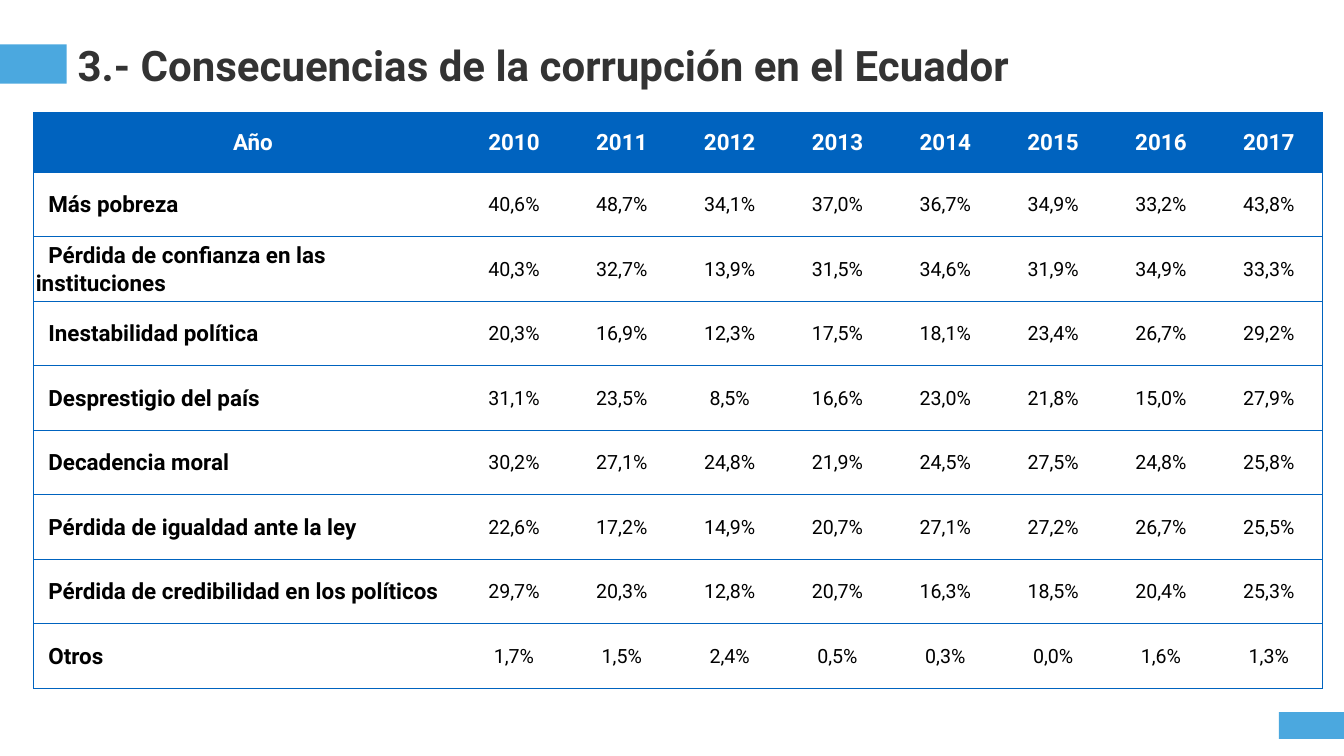
from dataclasses import dataclass

from lxml.etree import SubElement
from pptx import Presentation
from pptx.dml.color import RGBColor
from pptx.enum.shapes import MSO_SHAPE
from pptx.enum.text import MSO_ANCHOR, PP_ALIGN
from pptx.oxml.ns import qn
from pptx.util import Emu, Pt

EMU_PER_PX = 9144


@dataclass(frozen=True)
class Theme:
    font: str = "Roboto"
    title_color: str = "333333"
    accent: str = "4BA8DF"
    table_blue: str = "0063BF"
    header_text: str = "FFFFFF"
    body_text: str = "000000"
    title_size: int = 60
    label_size: int = 32
    value_size: int = 28
    border_width: float = 0.75
    line_spacing: float = 1.07


YEARS = range(2010, 2018)
CONSEQUENCES = [
    ("Más pobreza", "40,6 48,7 34,1 37,0 36,7 34,9 33,2 43,8"),
    ("Pérdida de confianza en las instituciones", "40,3 32,7 13,9 31,5 34,6 31,9 34,9 33,3"),
    ("Inestabilidad política", "20,3 16,9 12,3 17,5 18,1 23,4 26,7 29,2"),
    ("Desprestigio del país", "31,1 23,5 8,5 16,6 23,0 21,8 15,0 27,9"),
    ("Decadencia moral", "30,2 27,1 24,8 21,9 24,5 27,5 24,8 25,8"),
    ("Pérdida de igualdad ante la ley", "22,6 17,2 14,9 20,7 27,1 27,2 26,7 25,5"),
    ("Pérdida de credibilidad en los políticos", "29,7 20,3 12,8 20,7 16,3 18,5 20,4 25,3"),
    ("Otros", "1,7 1,5 2,4 0,5 0,3 0,0 1,6 1,3"),
]


def px(length):
    return Emu(length * EMU_PER_PX)


class SlideBuilder:
    def __init__(self, slide, theme):
        self.slide = slide
        self.theme = theme

    def format_runs(self, para, size, color, bold):
        for span in para.runs:
            span.font.name = self.theme.font
            span.font.size = Pt(size)
            span.font.bold = bold
            span.font.color.rgb = RGBColor.from_string(color)

    def title(self, text, left, top, width, height):
        box = self.slide.shapes.add_textbox(px(left), px(top), px(width), px(height))
        frame = box.text_frame
        frame.word_wrap = True
        frame.vertical_anchor = MSO_ANCHOR.MIDDLE
        frame.margin_left = frame.margin_right = 0
        frame.margin_top = frame.margin_bottom = 0
        frame.text = text
        self.format_runs(frame.paragraphs[0], self.theme.title_size, self.theme.title_color, True)

    def accent_bar(self, left, top, width, height):
        bar = self.slide.shapes.add_shape(
            MSO_SHAPE.RECTANGLE, px(left), px(top), px(width), px(height)
        )
        bar.shadow.inherit = False
        bar.fill.solid()
        bar.fill.fore_color.rgb = RGBColor.from_string(self.theme.accent)
        bar.line.fill.background()

    def borders(self, cell, first, last):
        properties = cell._tc.get_or_add_tcPr()
        sides = {"a:lnL": first, "a:lnR": last, "a:lnT": True, "a:lnB": True}
        for position, (tag, visible) in enumerate(sides.items()):
            line = SubElement(properties, qn(tag))
            if visible:
                line.set("w", str(Pt(self.theme.border_width)))
                fill = SubElement(line, qn("a:solidFill"))
                SubElement(fill, qn("a:srgbClr")).set("val", self.theme.table_blue)
            else:
                SubElement(line, qn("a:noFill"))
            properties.insert(position, line)

    def cell(self, cell, text, is_header, is_label):
        theme = self.theme
        cell.margin_left = cell.margin_right = px(5)
        cell.margin_top = cell.margin_bottom = 0
        cell.vertical_anchor = MSO_ANCHOR.MIDDLE
        if is_header:
            cell.fill.solid()
            cell.fill.fore_color.rgb = RGBColor.from_string(theme.table_blue)
        else:
            cell.fill.background()
        cell.text = text
        para = cell.text_frame.paragraphs[0]
        para.line_spacing = theme.line_spacing
        para.alignment = PP_ALIGN.LEFT if is_label and not is_header else PP_ALIGN.CENTER
        if is_label:
            para.level = 1
            paragraph_properties = para._p.get_or_add_pPr()
            paragraph_properties.set("marL", "0")
            paragraph_properties.set("indent", str(px(25)))
        emphasized = is_header or is_label
        size = theme.label_size if emphasized else theme.value_size
        color = theme.header_text if is_header else theme.body_text
        self.format_runs(para, size, color, emphasized)

    def table(self, rows, left, top, column_widths, row_heights):
        table = self.slide.shapes.add_table(
            len(rows), len(column_widths), px(left), px(top),
            px(sum(column_widths)), px(sum(row_heights)),
        ).table
        table.first_row = True
        table.horz_banding = False
        for column, width in zip(table.columns, column_widths):
            column.width = px(width)
        for row, height in zip(table.rows, row_heights):
            row.height = px(height)
        last_column = len(column_widths) - 1
        for row_index, texts in enumerate(rows):
            for column_index, text in enumerate(texts):
                cell = table.cell(row_index, column_index)
                self.cell(cell, text, row_index == 0, column_index == 0)
                self.borders(cell, column_index == 0, column_index == last_column)


def main():
    deck = Presentation()
    deck.slide_width, deck.slide_height = px(2667), px(1500)
    page = SlideBuilder(deck.slides.add_slide(deck.slide_layouts[6]), Theme())
    page.title("3.- Consecuencias de la corrupción en el Ecuador", 154, 77, 2536, 101)
    page.accent_bar(0, 88, 132, 78)
    page.accent_bar(2538, 1413, 132, 53)
    rows = [["Año", *map(str, YEARS)]]
    for label, values in CONSEQUENCES:
        rows.append([label, *(f"{value}%" for value in values.split())])
    page.table(
        rows, 66, 223,
        [847] + [214] * len(YEARS),
        [118] + [128] * len(CONSEQUENCES),
    )
    deck.save("out.pptx")


if __name__ == "__main__":
    main()
